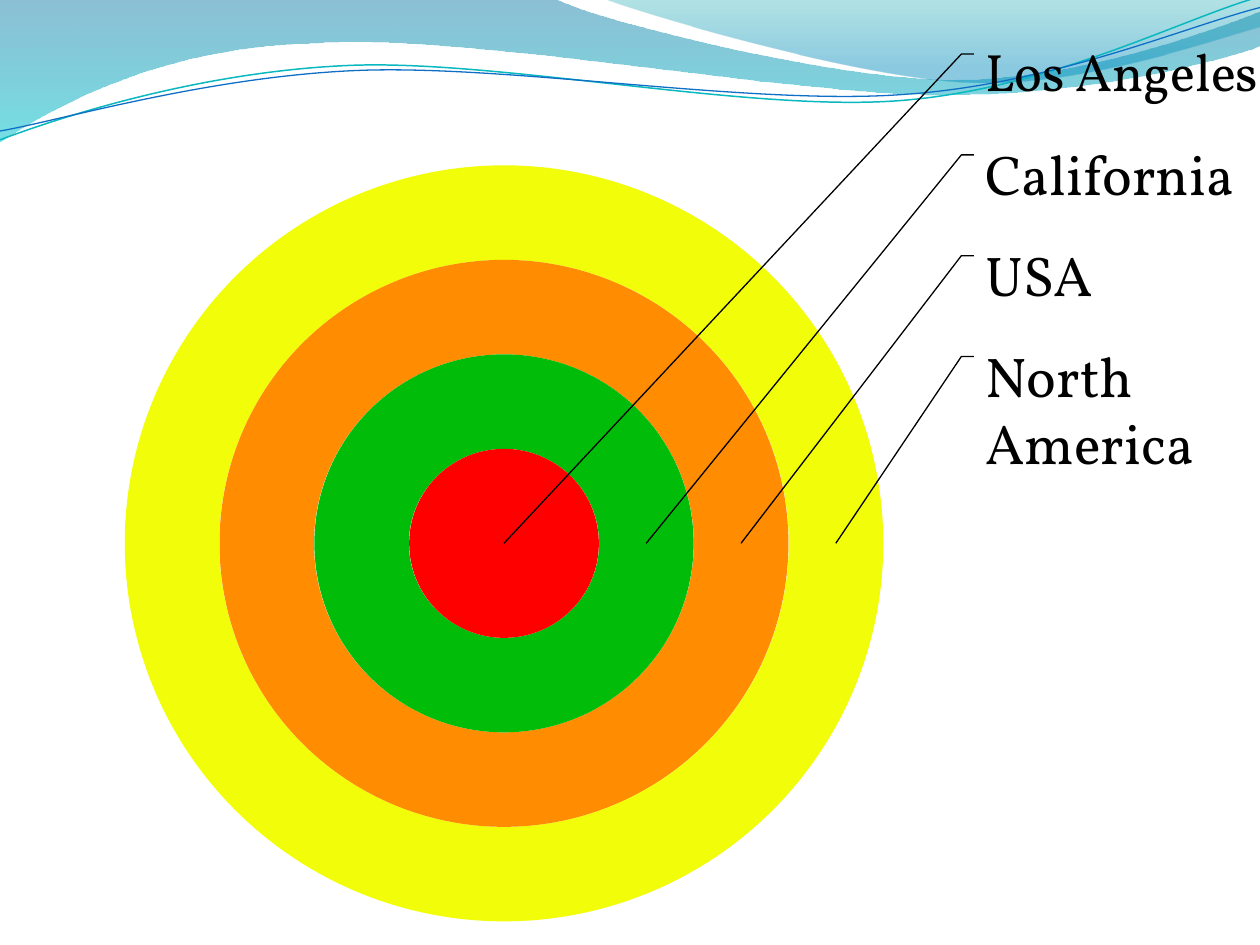
from dataclasses import dataclass

from lxml.etree import SubElement
from pptx import Presentation
from pptx.dml.color import RGBColor
from pptx.enum.shapes import MSO_SHAPE as Preset
from pptx.enum.text import MSO_ANCHOR as Anchor, PP_ALIGN as Align
from pptx.oxml.ns import qn
from pptx.util import Inches, Pt


@dataclass(frozen=True)
class Theme:
    font: str = "Vollkorn"
    ink: str = "000000"
    label_size: int = 32
    long_label_size: int = 30
    leader_width: float = 0.75
    city: str = "FF0000"
    state: str = "01BD0A"
    country: str = "FF8C01"
    continent: str = "F1FD09"
    wave_teal: str = "0AB8BF"
    wave_blue: str = "0F6FC6"
    left_band: tuple = ((0, "0074A1", 45), (1, "00C6CF", 55))
    right_band: tuple = ((0, "00A1A9", 30), (0.8, "008BBF", 45))


THEME = Theme()
WIDTH, HEIGHT = 10, 7.5
BAND_W, BAND_H = 6.02 / 8, HEIGHT / 10
CENTER_X, CENTER_Y = 0.4 * WIDTH, 0.575 * HEIGHT
LABEL_X, LABEL_Y = 7.82, 0.31
LABEL_W, LABEL_H = 0.12 * WIDTH, 0.8
LEADER_DROP, LEADER_GAP, LEADER_ELBOW = 0.12, 0.09, 0.19

LEFT_BAND = [
    [(0, 0)],
    [(4.4, -0.01)],
    [(4.76, 0.17), (6.64, 0.63), (7.58, 0.63)],
    [(8.53, 0.63), (9.58, 0.26), (10, 0.09)],
    [(10.01, 0.36)],
    [(9.83, 0.44), (8.7, 0.76), (7.46, 0.75)],
    [(6.22, 0.75), (3.82, 0.28), (2.57, 0.34)],
    [(1.29, 0.36), (0.46, 0.83), (-0.01, 1.13)],
]
RIGHT_BAND = [
    [(4.79, -0.01)],
    [(5.09, 0.11), (6.82, 0.62), (7.69, 0.65)],
    [(8.56, 0.69), (9.61, 0.32), (10, 0.21)],
    [(10, 0)],
]
TEAL_WAVE = [
    [(0, 1.11)],
    [(0.48, 0.93), (1.58, 0.57), (2.77, 0.52)],
    [(3.95, 0.47), (5.93, 0.89), (7.13, 0.8)],
    [(8.33, 0.71), (9.38, 0.15), (9.98, -0.02)],
]
BLUE_WAVE = [
    [(0, 1.04)],
    [(0.47, 0.96), (1.64, 0.61), (2.83, 0.56)],
    [(4.03, 0.51), (5.97, 0.84), (7.17, 0.75)],
    [(8.36, 0.67), (9.41, 0.21), (10, 0.06)],
]


def add_outline(slide, segments, close):
    ends = [(Inches(x), Inches(y)) for x, y in (segment[-1] for segment in segments)]
    builder = slide.shapes.build_freeform(*ends[0])
    builder.add_line_segments(ends[1:], close=close)
    outline = builder.convert_to_shape()
    outline.shadow.inherit = False
    steps = outline.element.spPr.findall(".//" + qn("a:lnTo"))
    for step, segment in zip(steps, segments[1:]):
        if len(segment) == 3:
            bend(step, segment, outline.left, outline.top)
    return outline


def bend(step, segment, left, top):
    curve = step.makeelement(qn("a:cubicBezTo"))
    for x, y in segment:
        SubElement(curve, qn("a:pt"), x=str(Inches(x) - left), y=str(Inches(y) - top))
    step.getparent().replace(step, curve)


def move_to_master(slide, outline):
    master = slide.slide_layout.slide_master
    last_id = max(shape.shape_id for shape in master.shapes)
    outline.element.find(".//" + qn("p:cNvPr")).set("id", str(last_id + 1))
    master.shapes.element.append(outline.element)


def add_band(slide, segments, stops):
    band = add_outline(slide, segments, True)
    band.line.fill.background()
    band.fill.gradient()
    band.fill.gradient_angle = 270
    for stop, (position, color, _) in zip(band.fill.gradient_stops, stops):
        stop.position = position
        stop.color.rgb = RGBColor.from_string(color)
    colors = band.element.spPr.findall(".//" + qn("a:srgbClr"))
    for color, (_, _, opacity) in zip(colors, stops):
        SubElement(color, qn("a:alpha"), val=str(opacity * 1000))
    move_to_master(slide, band)


def add_wave(slide, segments, color, width):
    wave = add_outline(slide, segments, False)
    wave.fill.background()
    wave.line.color.rgb = RGBColor.from_string(color)
    wave.line.width = Pt(width)
    move_to_master(slide, wave)


def add_ring(slide, level, color):
    width, height = 2 * (level + 1) * BAND_W, 2 * (level + 1) * BAND_H
    ring = slide.shapes.add_shape(
        Preset.DONUT if level else Preset.OVAL,
        Inches(CENTER_X - width / 2), Inches(CENTER_Y - height / 2),
        Inches(width), Inches(height))
    if level:
        ring.adjustments[0] = BAND_H / height
    ring.shadow.inherit = False
    ring.fill.solid()
    ring.fill.fore_color.rgb = RGBColor.from_string(color)
    ring.line.fill.background()


def write_text(frame, text, *, size, color, font):
    frame.word_wrap = False
    frame.vertical_anchor = Anchor.TOP
    frame.margin_left = frame.margin_right = 0
    frame.margin_top = frame.margin_bottom = 0
    frame.text = text
    for paragraph in frame.paragraphs:
        paragraph.alignment = Align.LEFT
        for run in paragraph.runs:
            run.font.size = Pt(size)
            run.font.name = font
            run.font.color.rgb = RGBColor.from_string(color)


def add_label(slide, level, text, size):
    top = LABEL_Y + level * LABEL_H
    tip_x = CENTER_X + (level + 0.5) * BAND_W if level else CENTER_X
    label = slide.shapes.add_shape(
        Preset.LINE_CALLOUT_2_NO_BORDER, Inches(LABEL_X), Inches(top),
        Inches(LABEL_W), Inches(LABEL_H))
    leader = [(LEADER_DROP, -LEADER_GAP), (LEADER_DROP, -LEADER_ELBOW),
              (CENTER_Y - top, tip_x - LABEL_X)]
    for index, (down, across) in enumerate(leader):
        label.adjustments[2 * index] = down / LABEL_H
        label.adjustments[2 * index + 1] = across / LABEL_W
    label.shadow.inherit = False
    label.fill.background()
    label.line.color.rgb = RGBColor.from_string(THEME.ink)
    label.line.width = Pt(THEME.leader_width)
    write_text(label.text_frame, text, size=size, color=THEME.ink, font=THEME.font)


def main():
    deck = Presentation()
    deck.slide_width, deck.slide_height = Inches(WIDTH), Inches(HEIGHT)
    slide = deck.slides.add_slide(deck.slide_layouts.get_by_name("Blank"))

    add_band(slide, LEFT_BAND, THEME.left_band)
    add_band(slide, RIGHT_BAND, THEME.right_band)
    add_wave(slide, TEAL_WAVE, THEME.wave_teal, 0.85)
    add_wave(slide, BLUE_WAVE, THEME.wave_blue, 0.75)

    places = [
        ("Los Angeles", THEME.city, THEME.long_label_size),
        ("California", THEME.state, THEME.label_size),
        ("USA", THEME.country, THEME.label_size),
        ("North\nAmerica", THEME.continent, THEME.label_size),
    ]
    for level, (place, color, size) in reversed(list(enumerate(places))):
        add_ring(slide, level, color)
        add_label(slide, level, place, size)

    deck.save("out.pptx")


if __name__ == "__main__":
    main()
